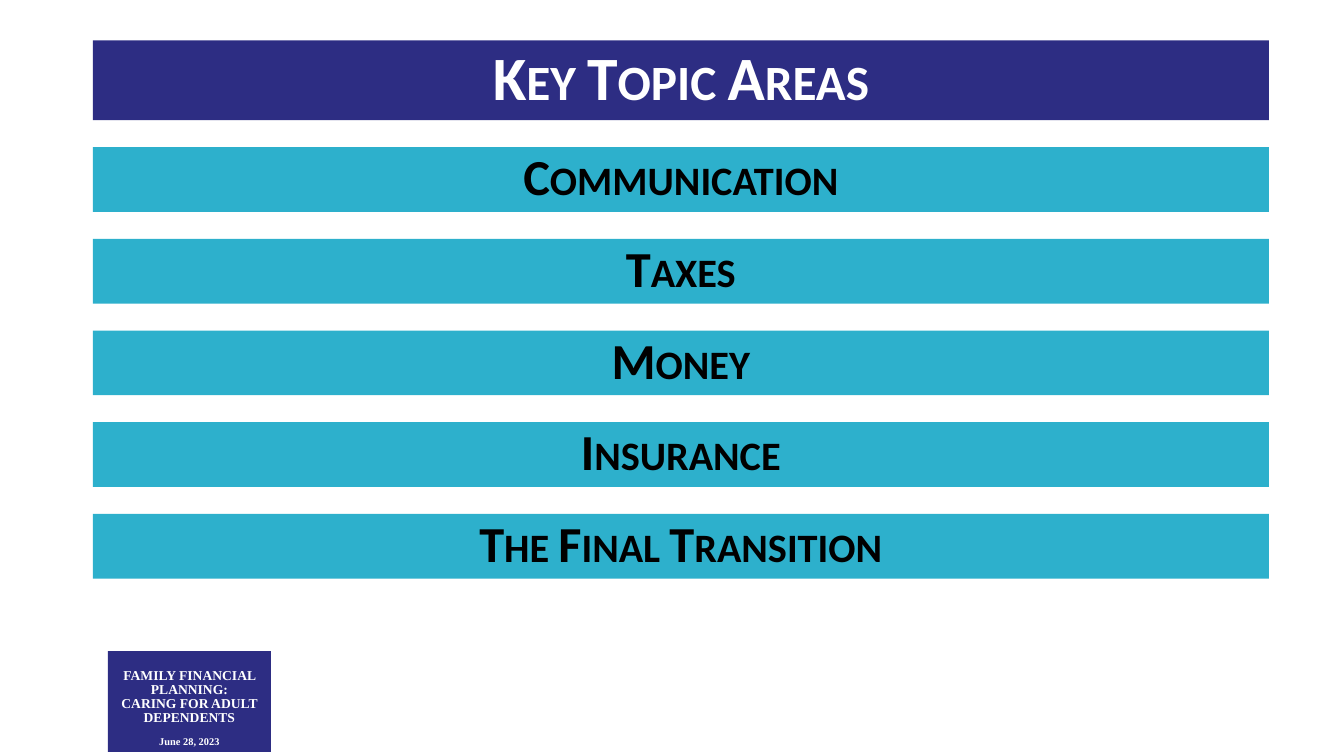
from dataclasses import dataclass

from pptx import Presentation
from pptx.dml.color import RGBColor
from pptx.enum.shapes import MSO_SHAPE as Shape
from pptx.enum.text import MSO_ANCHOR as Anchor, MSO_AUTO_SIZE as AutoSize, PP_ALIGN as Align
from pptx.util import Cm, Pt


@dataclass(frozen=True)
class Theme:
    """Colours, fonts and type sizes of the deck."""
    navy: RGBColor = RGBColor(0x2D, 0x2D, 0x83)
    teal: RGBColor = RGBColor(0x2D, 0xB0, 0xCC)
    white: RGBColor = RGBColor(0xFF, 0xFF, 0xFF)
    black: RGBColor = RGBColor(0, 0, 0)
    heading_font: str = "Calibri"
    badge_font: str = "Times New Roman"
    title_size: float = 44
    topic_size: float = 36
    badge_size: float = 9.7
    date_size: float = 7.4


THEME = Theme()
TOPICS = ["Communication", "Taxes", "Money", "Insurance", "The Final Transition"]


def place(shape, left, top, width, height):
    """Move a shape to a box given in centimetres."""
    shape.left, shape.top, shape.width, shape.height = map(Cm, (left, top, width, height))


def paint(shape, colour):
    """Give a shape a plain fill."""
    shape.fill.solid()
    shape.fill.fore_color.rgb = colour


def add_bar(page, colour, *box):
    """Add a plain rectangle without line or shadow."""
    bar = page.shapes.add_shape(Shape.RECTANGLE, *map(Cm, box))
    bar.shadow.inherit = False
    bar.line.fill.background()
    paint(bar, colour)
    return bar


def style(para, font_name, size, colour, spacing):
    """Set a centred bold paragraph."""
    para.alignment = Align.CENTER
    para.line_spacing = spacing
    font = para.font
    font.name, font.size, font.bold = font_name, Pt(size), True
    font.color.rgb = colour


def write_heading(shape, text, size, colour):
    """Write one line of small capitals in the middle of a shape."""
    frame = shape.text_frame
    frame.text = text
    frame.word_wrap = True
    frame.auto_size = AutoSize.NONE
    frame.vertical_anchor = Anchor.MIDDLE
    para = frame.paragraphs[0]
    style(para, THEME.heading_font, size, colour, 0.9)
    para._p.get_or_add_pPr().get_or_add_defRPr().set("cap", "small")


def fill_title(page, left, top, width, height):
    """Fill the title placeholder as a navy banner."""
    title = page.shapes.title
    place(title, left, top, width, height)
    paint(title, THEME.navy)
    write_heading(title, "Key Topic Areas", THEME.title_size, THEME.white)


def add_topics(page, left, top, width, height):
    """Stack one bar per topic with equal gaps."""
    bar_height = 1.63
    pitch = (height - bar_height) / (len(TOPICS) - 1)
    for index, topic in enumerate(TOPICS):
        bar = add_bar(page, THEME.teal, left, top + index * pitch, width, bar_height)
        write_heading(bar, topic, THEME.topic_size, THEME.black)


def add_badge(page, left, top, width, height):
    """Add the event name and date on a navy block."""
    frame = add_bar(page, THEME.navy, left, top, width, height).text_frame
    frame.word_wrap = True
    frame.vertical_anchor = Anchor.TOP
    frame.margin_top = Cm(0.46)
    event, date = frame.paragraphs[0], frame.add_paragraph()
    event.text = "FAMILY FINANCIAL PLANNING:\vCARING FOR ADULT DEPENDENTS"
    date.text = "June 28, 2023"
    date.space_before = Pt(9)
    style(event, THEME.badge_font, THEME.badge_size, THEME.white, 0.85)
    style(date, THEME.badge_font, THEME.date_size, THEME.white, 0.85)


def main():
    """Build the deck and save it."""
    deck = Presentation()
    deck.slide_width, deck.slide_height = Cm(33.87), Cm(19.05)
    page = deck.slides.add_slide(deck.slide_layouts.get_by_name("Title Only"))
    add_badge(page, 2.72, 16.41, 4.11, 2.54)
    fill_title(page, 2.34, 1.02, 29.64, 2.01)
    add_topics(page, 2.34, 3.71, 29.64, 10.87)
    deck.save("out.pptx")


if __name__ == "__main__":
    main()
